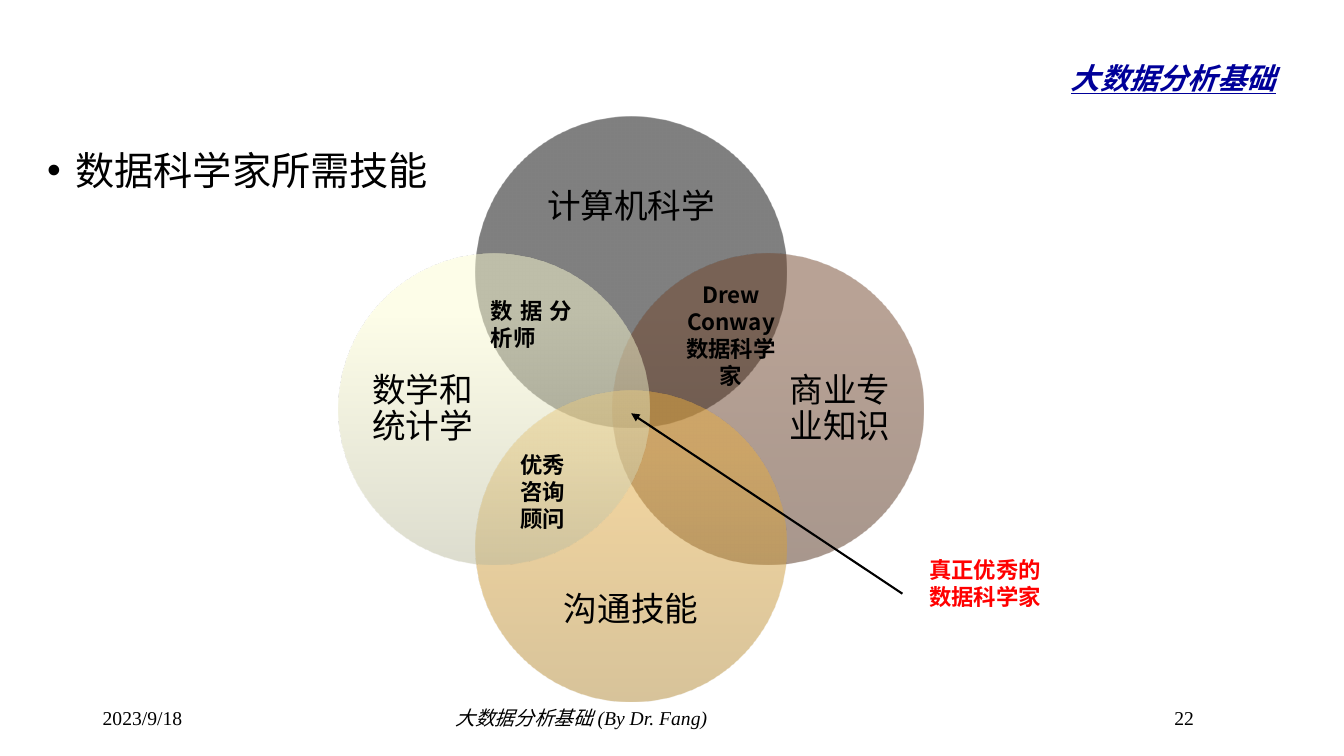
from pptx import Presentation
from pptx.util import Inches, Pt
from pptx.dml.color import RGBColor as Rgb
from pptx.enum.shapes import MSO_SHAPE as Shape, MSO_CONNECTOR as Connector
from pptx.enum.text import PP_ALIGN as Align, MSO_ANCHOR as Anchor
from pptx.oxml.ns import qn
from lxml.etree import SubElement

THEME = {
    "ink": "000000", "title": "000099", "accent": "FF0000",
    "serif": "Times New Roman", "sans": "Noto Sans CJK SC",
    "title_size": 36, "body_size": 28, "skill_size": 24, "role_size": 16, "footer_size": 14,
    # Circle colours run from bottom to top
    "computing": ("000000", "000000"), "business": ("512F1B", "71452B"),
    "communication": ("B18935", "E9AE40"), "maths": ("BBBB9F", "FDFDD3"),
}

# Grid: square cells, 75 rows on the slide's height
deck = Presentation()
deck.slide_width, deck.slide_height = Inches(13.33), Inches(7.5)
CELL = deck.slide_height / 75
page = deck.slides.add_slide(deck.slide_layouts[6])


def cells(*counts):
    return [round(count * CELL) for count in counts]


def add_text(area, text, size, align=Align.LEFT, color="ink", font="serif",
             anchor=Anchor.TOP, wrap=True, inset=None, spacing=None, **style):
    box = page.shapes.add_textbox(*cells(*area))
    frame = box.text_frame
    frame.text = text
    frame.word_wrap = wrap
    frame.vertical_anchor = anchor
    if inset is not None:
        frame.margin_left = frame.margin_right = frame.margin_top = frame.margin_bottom = inset
    for para in frame.paragraphs:
        para.alignment = align
        para.line_spacing = spacing
        for span in para.runs:
            span.font.name = THEME[font]
            span.font.size = Pt(THEME[size])
            span.font.color.rgb = Rgb.from_string(THEME[color])
            for key, value in style.items():
                setattr(span.font, key, value)
            SubElement(span.font._element, qn("a:ea")).set("typeface", THEME["sans"])
    return box


# Title, lowered below the baseline
title = add_text((19.4, 0.5, 108.1, 11), "大数据分析基础", "title_size", Align.RIGHT, "title",
                 anchor=Anchor.MIDDLE, bold=True, italic=True, underline=True)
title.text_frame.paragraphs[0].runs[0].font._element.set("baseline", "-25000")

# Bullet line
body = add_text((3.7, 13.1, 126, 55.9), "数据科学家所需技能", "body_size", spacing=1.2)
bullet = body.text_frame.paragraphs[0]._p.get_or_add_pPr()
bullet.set("marL", str(Inches(0.28)))
bullet.set("indent", str(-Inches(0.28)))
SubElement(bullet, qn("a:buFont")).set("typeface", "Arial")
SubElement(bullet, qn("a:buChar")).set("char", "•")

# Footer
for left, width, text, italic in [(115.5, 8.7, "22", False),
                                  (44.2, 64.2, "大数据分析基础 (By Dr. Fang)", True),
                                  (9.2, 30, "2023/9/18", False)]:
    add_text((left, 69.5, width, 4), text, "footer_size", italic=italic)

# Four overlapping skill circles around one centre
CENTER_X, CENTER_Y, DIAMETER, OFFSET = 62.6, 40.6, 30.8, 13.6
skills = [("computing", "计算机科学", 0, -1), ("business", "商业专业知识", 1, 0),
          ("communication", "沟通技能", 0, 1), ("maths", "数学和统计学", -1, 0)]
for name, text, across, down in skills:
    circle = page.shapes.add_shape(Shape.OVAL, *cells(
        CENTER_X + across * OFFSET - DIAMETER / 2,
        CENTER_Y + down * OFFSET - DIAMETER / 2, DIAMETER, DIAMETER))
    circle.shadow.inherit = False
    circle.line.fill.background()
    circle.fill.gradient()
    circle.fill.gradient_angle = 90
    for stop, color, position in zip(circle.fill.gradient_stops, THEME[name], (0, 0.8)):
        stop.color.rgb = Rgb.from_string(color)
        stop.position = position
    for color in circle._element.spPr.iter(qn("a:srgbClr")):
        SubElement(color, qn("a:alpha")).set("val", "50000")

    width, height = (11.9, 23.7) if across else (23.7, 9.8)
    add_text((CENTER_X + across * 20.7 - width / 2, CENTER_Y + down * 20 - height / 2,
              width, height), text, "skill_size", Align.CENTER,
             anchor=Anchor.MIDDLE, inset=0, spacing=0.9)

# Roles in the overlaps
for area, text, align, color in [
        ((47.7, 29, 10, 4.2), "数据分析师", Align.JUSTIFY, "ink"),
        ((66.9, 27.4, 11.2, 7.3), "Drew Conway\n数据科学家", Align.CENTER, "ink"),
        ((49.6, 44.3, 8.5, 8), "优秀\n咨询顾问", Align.CENTER, "ink"),
        ((89.5, 54.7, 16.4, 8.5), "真正优秀的\n数据科学家", Align.CENTER, "accent")]:
    add_text(area, text, "role_size", align, color, "sans", wrap=False, bold=True)

# Arrow to the common centre
arrow = page.shapes.add_connector(Connector.STRAIGHT, *cells(89.5, 58.9, CENTER_X, 41))
arrow.line.color.rgb = Rgb.from_string(THEME["ink"])
arrow.line.width = Pt(1.5)
SubElement(arrow.line._get_or_add_ln(), qn("a:tailEnd")).set("type", "triangle")
SubElement(arrow._element.spPr, qn("a:effectLst"))

deck.save("out.pptx")
